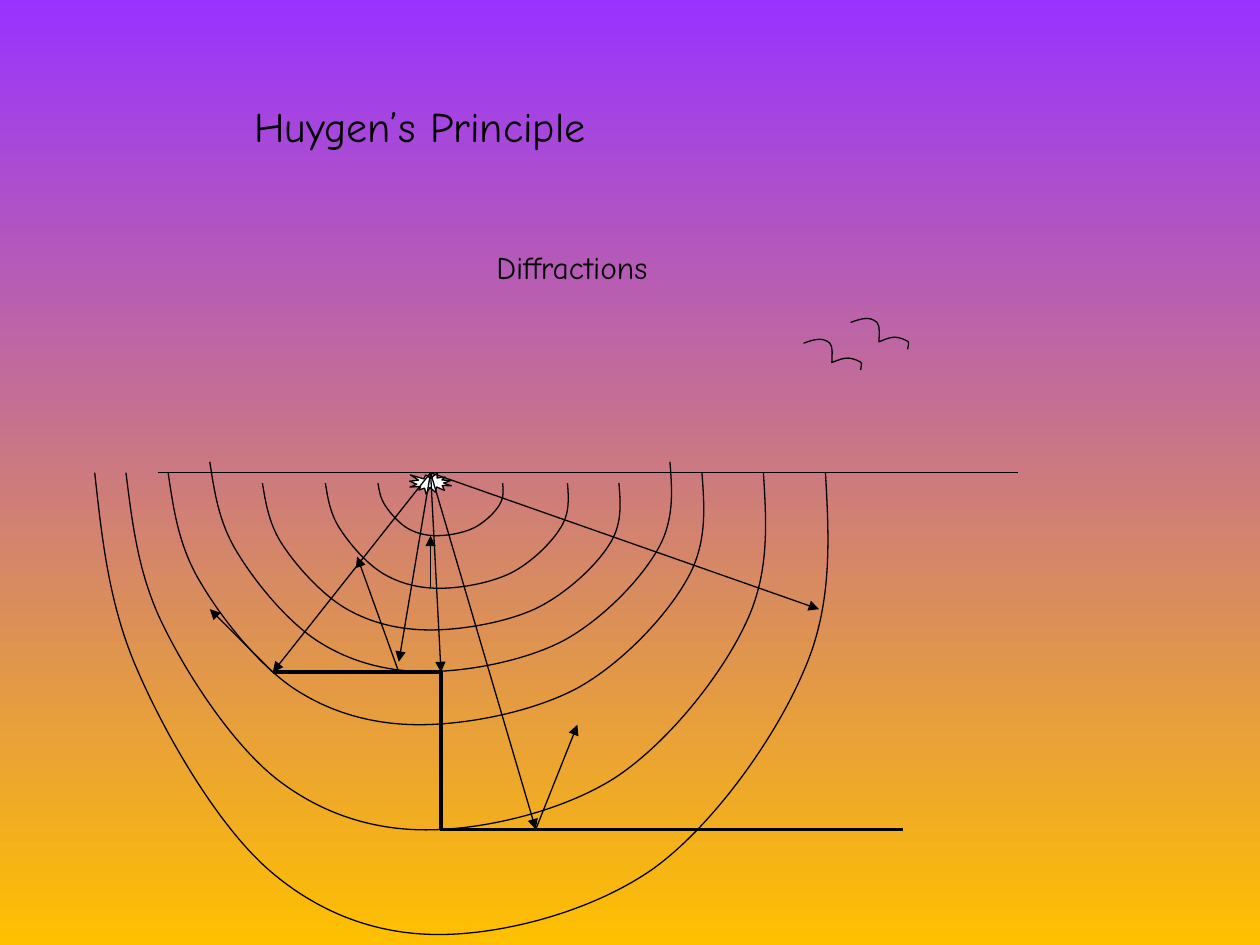
from lxml import etree
from pptx import Presentation
from pptx import util as u
from pptx.dml.color import RGBColor
from pptx.enum import shapes, text
from pptx.oxml.ns import qn

COLORS = {"sky": "9933FF", "ground": "FFC000", "ink": "000000", "burst": "FFFFFF"}
FONT = "Comic Neue"
THIN, BOLD = 0.75, 2

# Wording, left, top, width, height (cm), size (pt), alignment
CAPTIONS = [
    ("Huygen’s Principle", 4.88, 1.91, 13.77, 1.27, 24, text.PP_ALIGN.LEFT),
    ("Diffractions", 5.28, 4.88, 12.5, 1.02, 18, text.PP_ALIGN.CENTER),
]

# All lengths in cm
SURFACE = ((3.18, 9.53), (20.53, 9.53))
SOURCE = (8.68, 9.53)
BURST = (8.26, 9.53, 0.84, 0.43)
STEP = [(5.5, 13.55), (8.89, 13.55), (8.89, 16.72), (18.2, 16.72)]

# Bezier points, start first, then three for each curve
BIRD = [(0, 0.15), (0.15, 0.1), (0.37, 0), (0.53, 0.15),
        (0.6, 0.23), (0.57, 0.41), (0.57, 0.54),
        (0.78, 0.46), (0.89, 0.39), (1.15, 0.53),
        (1.19, 0.55), (1.15, 0.63), (1.15, 0.69)]
BIRD_CORNERS = [(16.2, 6.77), (17.15, 6.35)]

# Wavefront outline in percent of its width and height
WAVEFRONT = [(0, 0), (1, 14.3), (1.9, 28.6), (5.8, 42.8),
             (9.7, 57.2), (16.6, 76), (23.3, 85.6),
             (30, 95.1), (37.9, 100), (46.6, 100),
             (55.3, 100), (67.4, 95.1), (75.8, 85.6),
             (84, 76), (92.3, 57.2), (96.1, 42.8),
             (100, 28.6), (99.5, 14.3), (99, 0)]
WAVEFRONT_BOXES = [
    (5.29, 9.74, 7.26, 2.96),
    (6.56, 9.74, 4.93, 2.12),
    (7.62, 9.74, 2.54, 1.06),
    (4.23, 9.31, 9.37, 4.23),
    (2.54, 9.53, 12.98, 7.2),
    (3.39, 9.53, 10.87, 5.08),
    (1.91, 9.53, 14.88, 9.31),
]

INCIDENT_ENDS = [(8.89, 13.55), (5.5, 13.55), (8.04, 13.34), (10.8, 16.72), (16.51, 12.28)]
RETURN_RAYS = [
    ((10.8, 16.72), (11.64, 14.61)),
    ((8.68, 11.85), (8.68, 10.8)),
    ((5.5, 13.55), (4.23, 12.28)),
    ((8.04, 13.55), (7.2, 11.22)),
]


def rgb(name):
    return RGBColor.from_string(COLORS[name])


def ink_line(shape, width=THIN):
    shape.line.color.rgb = rgb("ink")
    shape.line.width = u.Pt(width)


def add_outline(slide, points, width=THIN, curved=False):
    """Draw an open outline; curved reads the points as cubic Beziers."""
    points = [(u.Cm(x), u.Cm(y)) for x, y in points]
    builder = slide.shapes.build_freeform(*points[0])
    builder.add_line_segments(points[1:], close=False)
    outline = builder.convert_to_shape()
    outline.shadow.inherit = False
    outline.fill.background()
    ink_line(outline, width)
    if curved:
        segments = list(outline._element.iter(qn("a:lnTo")))
        for first in range(0, len(segments), 3):
            curve = etree.Element(qn("a:cubicBezTo"))
            segments[first].addprevious(curve)
            for segment in segments[first:first + 3]:
                curve.append(segment[0])
                segment.getparent().remove(segment)


def add_ray(slide, start, end, arrow=True):
    ends = [u.Cm(value) for value in (*start, *end)]
    ray = slide.shapes.add_connector(shapes.MSO_CONNECTOR.STRAIGHT, *ends)
    ink_line(ray)
    if arrow:
        etree.SubElement(ray.line._get_or_add_ln(), qn("a:tailEnd"), type="triangle")
    etree.SubElement(ray._element.spPr, qn("a:effectLst"))


def add_caption(slide, wording, left, top, width, height, size, alignment):
    box = slide.shapes.add_textbox(*map(u.Cm, (left, top, width, height)))
    frame = box.text_frame
    frame.word_wrap = True
    frame.text = wording
    paragraph = frame.paragraphs[0]
    paragraph.alignment = alignment
    font = paragraph.runs[0].font
    font.name, font.size = FONT, u.Pt(size)
    font.color.rgb = rgb("ink")


def paint_background(slide):
    fill = slide.background.fill
    fill.gradient()
    fill.gradient_angle = 270
    for stop, position, name in zip(fill.gradient_stops, (0, 1), ("sky", "ground")):
        stop.position = position
        stop.color.rgb = rgb(name)


def add_burst(slide):
    burst = slide.shapes.add_shape(shapes.MSO_SHAPE.EXPLOSION1, *map(u.Cm, BURST))
    burst.shadow.inherit = False
    burst.fill.solid()
    burst.fill.fore_color.rgb = rgb("burst")
    ink_line(burst)


def main():
    deck = Presentation()
    deck.slide_width, deck.slide_height = u.Cm(25.4), u.Cm(19.05)
    slide = deck.slides.add_slide(deck.slide_layouts[6])
    paint_background(slide)
    for caption in CAPTIONS:
        add_caption(slide, *caption)

    add_ray(slide, *SURFACE, arrow=False)
    for left, top in BIRD_CORNERS:
        add_outline(slide, [(left + x, top + y) for x, y in BIRD], curved=True)
    add_burst(slide)
    for left, top, width, height in WAVEFRONT_BOXES:
        front = [(left + width * x / 100, top + height * y / 100) for x, y in WAVEFRONT]
        add_outline(slide, front, curved=True)
    add_outline(slide, STEP, BOLD)

    for start, end in [(SOURCE, end) for end in INCIDENT_ENDS] + RETURN_RAYS:
        add_ray(slide, start, end)
    deck.save("out.pptx")


if __name__ == "__main__":
    main()
